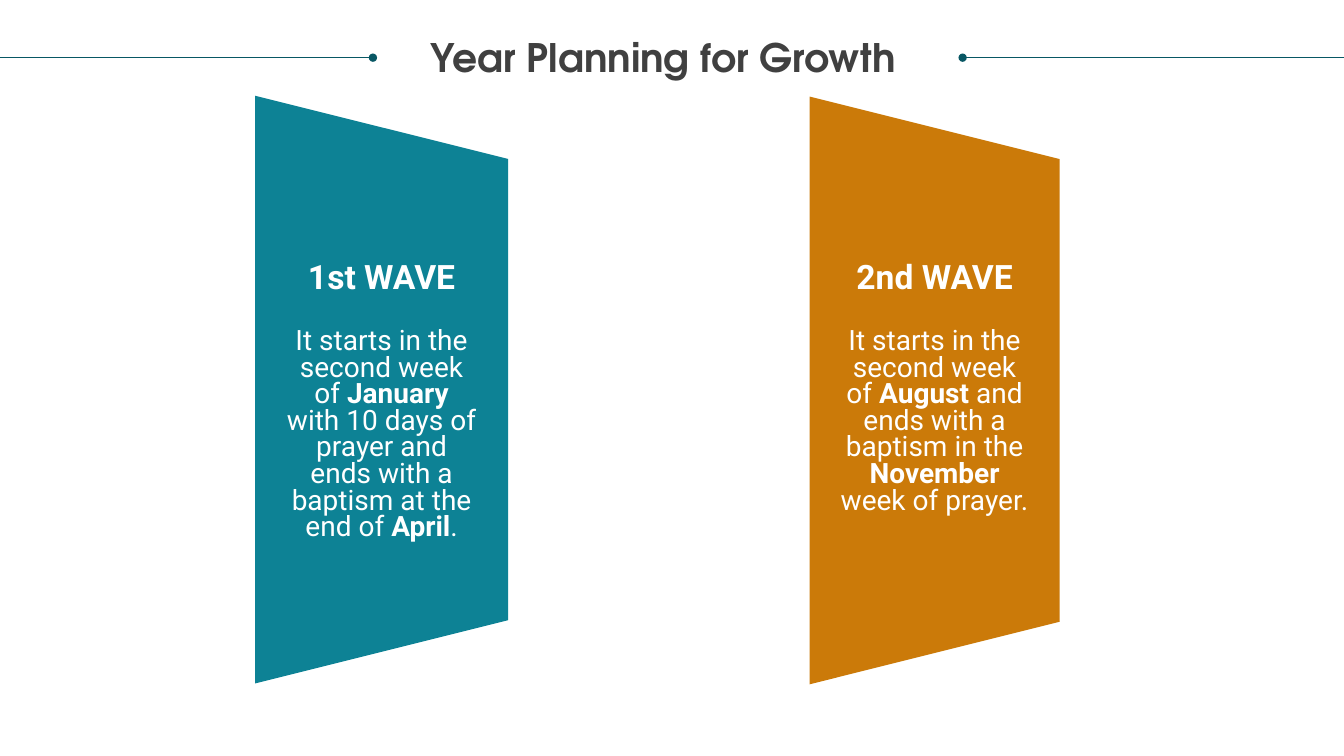
from lxml import etree
from pptx import Presentation
from pptx.dml.color import RGBColor
from pptx.enum.shapes import MSO_CONNECTOR, MSO_SHAPE
from pptx.enum.text import MSO_ANCHOR, MSO_AUTO_SIZE, PP_ALIGN
from pptx.oxml.ns import qn
from pptx.util import Pt

TEAL = RGBColor(0x0D, 0x82, 0x95)
ORANGE = RGBColor(0xCB, 0x7A, 0x09)
DARK_TEAL = RGBColor(0x08, 0x57, 0x64)
WHITE = RGBColor(0xFF, 0xFF, 0xFF)
GREY = RGBColor(0x40, 0x40, 0x40)
STRAIGHT = MSO_CONNECTOR.STRAIGHT
TRAPEZOID = MSO_SHAPE.TRAPEZOID
FIT_SHAPE = MSO_AUTO_SIZE.SHAPE_TO_FIT_TEXT

TITLE = "Year Planning for Growth"
# Each wave: heading, (text, bold) runs, colour, centre x, panel centre y, panel width
WAVES = [
    ("1st WAVE",
     [("It starts in the second week of ", False), ("January", True),
      (" with 10 days of prayer and ends with a baptism at the end of ", False),
      ("April", True), (".", False)],
     TEAL, 272.6, 278.3, 180.8),
    ("2nd WAVE",
     [("It starts in the second week of ", False), ("August", True),
      (" and ends with a baptism in the ", False),
      ("November ", True), ("week of prayer.", False)],
     ORANGE, 667.6, 278.9, 178.6),
]

SLIDE_W, SLIDE_H = 960, 540
RULE_Y = 41.2
# Each rule runs from the slide edge to a dot beside the title
RULES = [(0, 266.4), (SLIDE_W, 687.6)]
TITLE_BOX = (272.9, 27.4, 401.8, 61.2)
PANEL_H = 419.8
TEXT_W = 138.4
HEADING_TOP, HEADING_H = 182.9, 28.8
BODY_TOP, BODY_H = 235.4, 154

TITLE_FONT = {"name": "TeX Gyre Adventor", "size": Pt(28), "bold": True}
HEADING_FONT = {"name": "Roboto", "size": Pt(24)}
BODY_FONT = {"name": "Roboto", "size": Pt(20)}
FRAME = {"margin_left": 0, "margin_right": 0, "margin_top": 0, "margin_bottom": 0,
         "vertical_anchor": MSO_ANCHOR.TOP, "word_wrap": True, "auto_size": FIT_SHAPE}


def apply(target, values):
    for key, value in values.items():
        setattr(target, key, value)


def write(frame, runs, font, color, line_spacing):
    apply(frame, FRAME)
    paragraph = frame.paragraphs[0]
    apply(paragraph, {"alignment": PP_ALIGN.CENTER, "line_spacing": line_spacing})
    for text, bold in runs:
        run = paragraph.add_run()
        run.text = text
        apply(run.font, {**font, "bold": bold})
        run.font.color.rgb = color


def add_rule(slide, edge_x, dot_x):
    rule = slide.shapes.add_connector(STRAIGHT, Pt(edge_x), Pt(RULE_Y), Pt(dot_x), Pt(RULE_Y))
    rule.line.color.rgb = DARK_TEAL
    rule.line.width = Pt(0.5)
    etree.SubElement(rule.line._get_or_add_ln(), qn("a:tailEnd"), type="oval")
    etree.SubElement(rule._element.spPr, qn("a:effectLst"))


def add_wave(slide, heading, body, color, center_x, center_y, panel_w):
    # The trapezoid is turned by 90°, so its own width is the panel's height
    panel = slide.shapes.add_shape(TRAPEZOID, Pt(center_x - PANEL_H / 2),
                                   Pt(center_y - panel_w / 2), Pt(PANEL_H), Pt(panel_w))
    panel.rotation = 90
    panel.shadow.inherit = False
    panel.fill.solid()
    panel.fill.fore_color.rgb = color
    panel.line.fill.background()

    blocks = [(HEADING_TOP, HEADING_H, [(heading, True)], HEADING_FONT, 1.0),
              (BODY_TOP, BODY_H, body, BODY_FONT, Pt(19))]
    for top, height, runs, font, spacing in blocks:
        block = slide.shapes.add_textbox(Pt(center_x - TEXT_W / 2), Pt(top),
                                         Pt(TEXT_W), Pt(height))
        write(block.text_frame, runs, font, WHITE, spacing)


def main():
    deck = Presentation()
    deck.slide_width, deck.slide_height = Pt(SLIDE_W), Pt(SLIDE_H)
    slide = deck.slides.add_slide(deck.slide_layouts[5])

    for edge_x, dot_x in RULES:
        add_rule(slide, edge_x, dot_x)
    for wave in WAVES:
        add_wave(slide, *wave)

    title = slide.shapes.title
    apply(title, dict(zip(("left", "top", "width", "height"), map(Pt, TITLE_BOX))))
    write(title.text_frame, [(TITLE, True)], TITLE_FONT, GREY, 0.9)

    deck.save("out.pptx")


if __name__ == "__main__":
    main()
